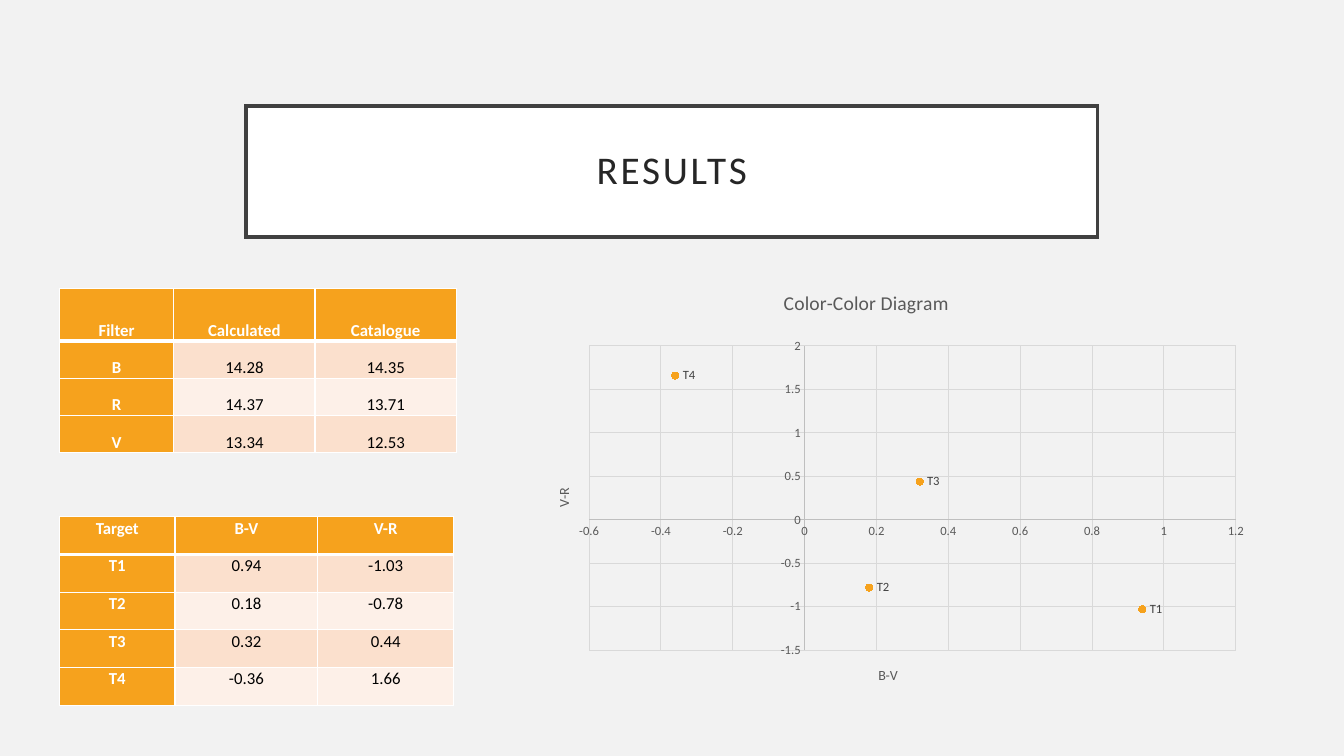
from dataclasses import dataclass

from lxml.etree import SubElement
from pptx import Presentation
from pptx.chart.data import XyChartData
from pptx.dml.color import RGBColor
from pptx.enum.chart import XL_CHART_TYPE, XL_LABEL_POSITION, XL_MARKER_STYLE, XL_TICK_MARK
from pptx.enum.shapes import MSO_SHAPE
from pptx.enum.text import MSO_ANCHOR, PP_ALIGN
from pptx.oxml.ns import qn
from pptx.util import Cm, Pt


@dataclass(frozen=True)
class Theme:
    """Colours and type sizes of the slide."""
    font: str = "Calibri"
    background: str = "F2F2F2"
    white: str = "FFFFFF"
    black: str = "000000"
    frame: str = "404040"
    heading: str = "262626"
    accent: str = "F6A21D"
    bands: tuple = ("FBE0CD", "FDF0E8")
    muted: str = "595959"
    axis: str = "BFBFBF"
    grid: str = "D9D9D9"
    heading_size: float = 28
    table_size: float = 12
    chart_title_size: float = 14
    axis_title_size: float = 10
    label_size: float = 9


THEME = Theme()

FILTER_ROWS = [
    ("Filter", "Calculated", "Catalogue"),
    ("B", "14.28", "14.35"),
    ("R", "14.37", "13.71"),
    ("V", "13.34", "12.53"),
]
TARGETS = [("T1", 0.94, -1.03), ("T2", 0.18, -0.78), ("T3", 0.32, 0.44), ("T4", -0.36, 1.66)]
TARGET_ROWS = [("Target", "B-V", "V-R")] + [
    (name, f"{b_v:.2f}", f"{v_r:.2f}") for name, b_v, v_r in TARGETS
]


def color(value):
    """Return the colour for a hexadecimal value."""
    return RGBColor.from_string(value)


def write_text(frame, text, size, text_color, bold=False, line_spacing=None, tracking=None):
    """Write one centred paragraph into a text frame."""
    paragraph = frame.paragraphs[0]
    paragraph.alignment = PP_ALIGN.CENTER
    if line_spacing:
        paragraph.line_spacing = line_spacing
    run = paragraph.add_run()
    run.text = text
    run.font.name = THEME.font
    run.font.size = Pt(size)
    run.font.bold = bold
    run.font.color.rgb = color(text_color)
    if tracking:
        run.font._element.set("spc", str(tracking * 100))


def set_borders(cell, widths):
    """Draw white cell borders with a width in points for each side."""
    properties = cell._tc.get_or_add_tcPr()
    for side, width in zip("LRTB", widths):
        line = SubElement(properties, qn(f"a:ln{side}"), w=str(Pt(width)))
        fill = SubElement(line, qn("a:solidFill"))
        SubElement(fill, qn("a:srgbClr"), val=THEME.white)


def set_layout(element, index, inner=False, **fractions):
    """Place a chart part at fractions of the chart area."""
    for old_layout in element.findall(qn("c:layout")):
        element.remove(old_layout)
    layout = SubElement(element, qn("c:layout"))
    element.insert(index, layout)
    manual = SubElement(layout, qn("c:manualLayout"))
    if inner:
        SubElement(manual, qn("c:layoutTarget"), val="inner")
    for key in ("x", "y"):
        SubElement(manual, qn(f"c:{key}Mode"), val="edge")
    for key, value in fractions.items():
        SubElement(manual, qn(f"c:{key}"), val=str(value))


def add_heading(slide, text, left, top, width, height):
    """Add the framed slide heading."""
    shape = slide.shapes.add_shape(
        MSO_SHAPE.RECTANGLE, Cm(left), Cm(top), Cm(width), Cm(height))
    shape.shadow.inherit = False
    shape.fill.solid()
    shape.fill.fore_color.rgb = color(THEME.white)
    shape.line.color.rgb = color(THEME.frame)
    shape.line.width = Pt(2.5)
    SubElement(shape.line._get_or_add_ln(), qn("a:miter"), lim="800000")
    frame = shape.text_frame
    frame.word_wrap = True
    frame.vertical_anchor = MSO_ANCHOR.MIDDLE
    frame.margin_left = frame.margin_right = frame.margin_top = frame.margin_bottom = Cm(0.5)
    write_text(frame, text, THEME.heading_size, THEME.heading, line_spacing=0.9, tracking=2)


def add_results_table(slide, rows, left, top, widths, heights, anchor, line_spacing):
    """Add a table with an accented first row and column and banded values."""
    table = slide.shapes.add_table(
        len(rows), len(widths), Cm(left), Cm(top), Cm(sum(widths)), Cm(sum(heights))).table
    table.first_row = table.horz_banding = False
    for column, width in zip(table.columns, widths):
        column.width = Cm(width)
    for row_index, values in enumerate(rows):
        table.rows[row_index].height = Cm(heights[row_index])
        for column_index, text in enumerate(values):
            cell = table.cell(row_index, column_index)
            is_header = row_index == 0 or column_index == 0
            set_borders(cell, (1, 1, 3 if row_index == 1 else 1, 3 if row_index == 0 else 1))
            cell.fill.solid()
            cell.fill.fore_color.rgb = color(
                THEME.accent if is_header else THEME.bands[(row_index - 1) % 2])
            cell.margin_left = cell.margin_right = Cm(0.18)
            cell.margin_top = cell.margin_bottom = 0
            cell.vertical_anchor = anchor
            write_text(cell.text_frame, text, THEME.table_size,
                       THEME.white if is_header else THEME.black,
                       bold=is_header, line_spacing=line_spacing)


def format_axis(axis, title, x, y):
    """Set the lines, labels and title of an axis."""
    axis.major_tick_mark = axis.minor_tick_mark = XL_TICK_MARK.NONE
    axis.has_major_gridlines = True
    for line, line_color in ((axis.format.line, THEME.axis),
                             (axis.major_gridlines.format.line, THEME.grid)):
        line.color.rgb = color(line_color)
        line.width = Pt(0.75)
    labels = axis.tick_labels
    labels.number_format = "General"
    labels.number_format_is_linked = False
    labels.font.name = THEME.font
    labels.font.size = Pt(THEME.label_size)
    labels.font.color.rgb = color(THEME.muted)
    write_text(axis.axis_title.text_frame, title, THEME.axis_title_size, THEME.muted)
    set_layout(axis.axis_title._element, 1, x=x, y=y)


def add_color_diagram(slide, left, top, width, height):
    """Add the scatter chart of the targets."""
    data = XyChartData()
    points = data.add_series("Series 1")
    for _, b_v, v_r in TARGETS:
        points.add_data_point(b_v, v_r)
    chart = slide.shapes.add_chart(
        XL_CHART_TYPE.XY_SCATTER, Cm(left), Cm(top), Cm(width), Cm(height), data).chart
    chart.has_legend = False
    chart.font.name = THEME.font
    chart.font.size = Pt(THEME.axis_title_size)
    write_text(chart.chart_title.text_frame, "Color-Color Diagram",
               THEME.chart_title_size, THEME.muted)
    set_layout(chart.chart_title._element, 1, x=0.33, y=0.03)
    set_layout(chart._chartSpace.chart.plotArea, 0, inner=True, x=0.07, y=0.17, w=0.88, h=0.7)
    format_axis(chart.category_axis, "B-V", x=0.46, y=0.9)
    format_axis(chart.value_axis, "V-R", x=0.02, y=0.49)

    plot = chart.plots[0]
    plot.vary_by_categories = False
    series = plot.series[0]
    series.smooth = False
    series.format.line.fill.background()
    marker = series.marker
    marker.style = XL_MARKER_STYLE.CIRCLE
    marker.size = 5
    marker.format.fill.solid()
    marker.format.fill.fore_color.rgb = color(THEME.accent)
    marker.format.line.color.rgb = color(THEME.accent)
    for index, (name, _, _) in enumerate(TARGETS):
        label = series.points[index].data_label
        write_text(label.text_frame, name, THEME.label_size, THEME.frame)
        label.position = XL_LABEL_POSITION.RIGHT


def build_results_slide(presentation):
    """Add the results slide with its heading, tables and chart."""
    slide = presentation.slides.add_slide(presentation.slide_layouts[6])
    slide.background.fill.solid()
    slide.background.fill.fore_color.rgb = color(THEME.background)
    add_heading(slide, "RESULTS", 6.2, 2.67, 21.46, 3.3)
    add_results_table(slide, FILTER_ROWS, 1.5, 7.27, (2.88, 3.56, 3.56),
                      (1.32, 0.94, 0.94, 0.94), MSO_ANCHOR.BOTTOM, 1.15)
    add_results_table(slide, TARGET_ROWS, 1.5, 13.02, (2.91, 3.6, 3.42),
                      [0.95] * len(TARGET_ROWS), MSO_ANCHOR.TOP, 1.07)
    add_color_diagram(slide, 13.55, 6.86, 18.52, 10.95)


def main():
    """Build and save the presentation."""
    presentation = Presentation()
    presentation.slide_width, presentation.slide_height = Cm(33.87), Cm(19.05)
    build_results_slide(presentation)
    presentation.save("out.pptx")


if __name__ == "__main__":
    main()
